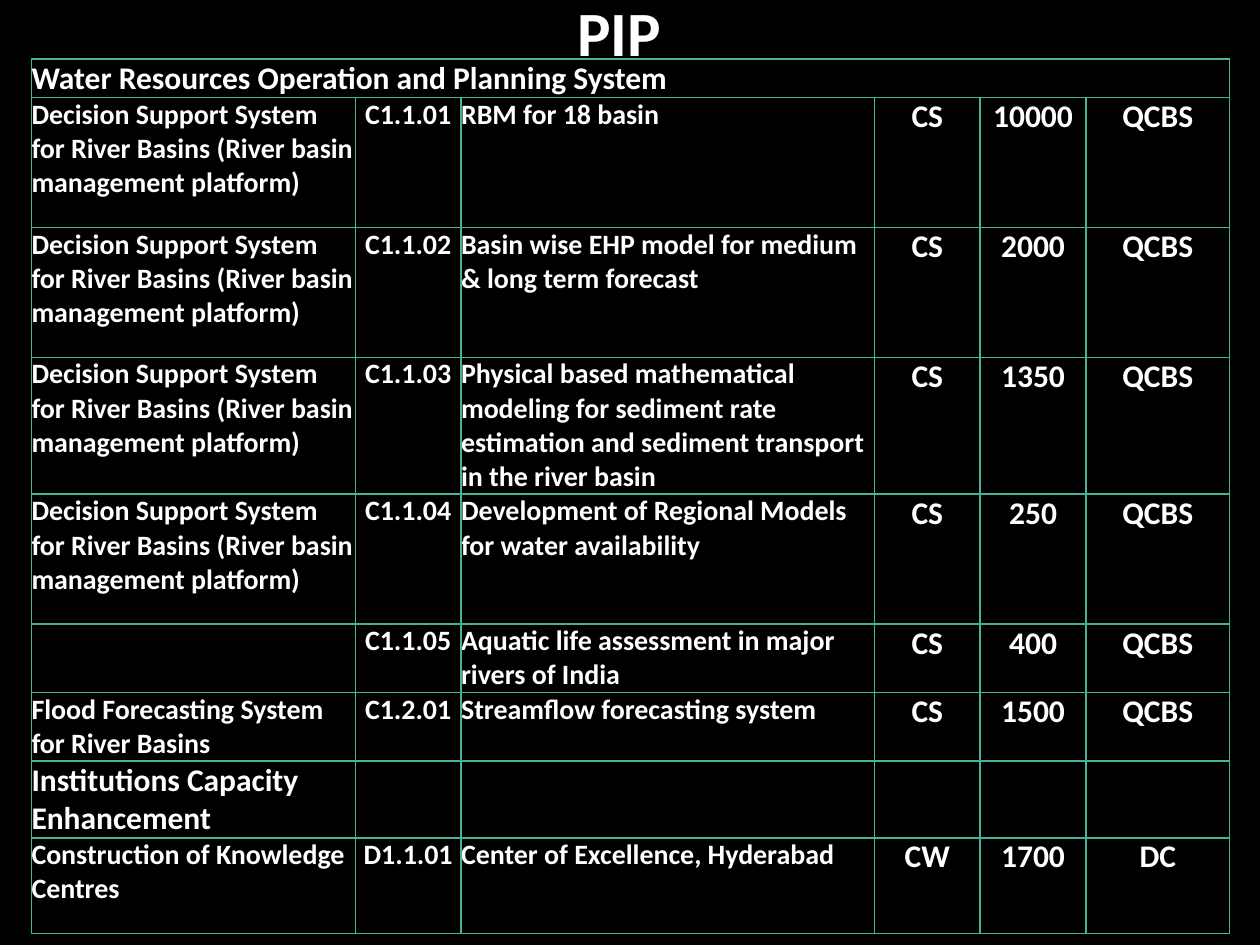
from lxml import etree
from pptx import Presentation
from pptx import util as u
from pptx.dml.color import RGBColor
from pptx.enum import text
from pptx.oxml.ns import qn

HUES = {"back": "000000", "ink": "FFFFFF", "rule": "46B298"}
FONT = "Calibri"
WIDE, HIGH = 10, 7.5
COLS = [2.57, 0.84, 3.28, 0.84, 0.84, 1.14]
ROWS = [0.3] + [1.03] * 4 + [0.52] * 2 + [0.58, 0.76]
SIZES = [16, 16, 16, 18, 18, 18]
MID = {1, 3, 4, 5}  # centred columns

BASIN = "Decision Support System for River Basins (River basin management platform)"
HEADS = {0: "Water Resources Operation and Planning System",
         7: "Institutions Capacity Enhancement"}
ITEMS = {
    1: (BASIN, "C1.1.01", "RBM for 18 basin", "CS", "10000", "QCBS"),
    2: (BASIN, "C1.1.02", "Basin wise EHP model for medium & long term forecast",
        "CS", "2000", "QCBS"),
    3: (BASIN, "C1.1.03", "Physical based mathematical modeling for sediment rate "
        "estimation and sediment transport in the river basin", "CS", "1350", "QCBS"),
    4: (BASIN, "C1.1.04", "Development of Regional Models for water availability",
        "CS", "250", "QCBS"),
    5: ("", "C1.1.05", "Aquatic life assessment in major rivers of India",
        "CS", "400", "QCBS"),
    6: ("Flood Forecasting System for River Basins", "C1.2.01",
        "Streamflow forecasting system", "CS", "1500", "QCBS"),
    8: ("Construction of Knowledge Centres", "D1.1.01",
        "Center of Excellence, Hyderabad", "CW", "1700", "DC"),
}


def hue(name):
    return RGBColor.from_string(HUES[name])


def write(frame, words, size, mid=False):
    para = frame.paragraphs[0]
    para.alignment = text.PP_ALIGN.CENTER if mid else text.PP_ALIGN.LEFT
    if not words:
        return
    run = para.add_run()
    run.text = words
    run.font.name, run.font.size, run.font.bold = FONT, u.Pt(size), True
    run.font.color.rgb = hue("ink")


def dress(cell):
    """Rule all four sides, clear the margins and fill the cell."""
    props = cell._tc.get_or_add_tcPr()
    for side in ("lnL", "lnR", "lnT", "lnB"):
        line = etree.SubElement(props, qn("a:" + side), w=str(u.Pt(1)))
        fill = etree.SubElement(line, qn("a:solidFill"))
        etree.SubElement(fill, qn("a:srgbClr"), val=HUES["rule"])
    cell.fill.solid()
    cell.fill.fore_color.rgb = hue("back")
    cell.margin_left = cell.margin_right = 0
    cell.margin_top = cell.margin_bottom = 0


def add_grid(slide):
    grid = slide.shapes.add_table(
        len(ROWS), len(COLS), u.Inches(0.25), u.Inches(0.47),
        u.Inches(sum(COLS)), u.Inches(sum(ROWS))).table
    grid.first_row = grid.horz_banding = False
    for col, width in zip(grid.columns, COLS):
        col.width = u.Inches(width)
    for row, height in zip(grid.rows, ROWS):
        row.height = u.Inches(height)
    for cell in grid.iter_cells():
        dress(cell)
    grid.cell(0, 0).merge(grid.cell(0, len(COLS) - 1))
    for r, words in HEADS.items():
        write(grid.cell(r, 0).text_frame, words, 18)
    for r, item in ITEMS.items():
        for c, words in enumerate(item):
            write(grid.cell(r, c).text_frame, words, SIZES[c], c in MID)


def add_title(slide, words):
    box = slide.shapes.add_textbox(0, 0, u.Inches(9.83), u.Inches(HIGH / 15))
    frame = box.text_frame
    frame.word_wrap = True
    frame.vertical_anchor = text.MSO_ANCHOR.MIDDLE
    write(frame, words, 36, True)


def main():
    deck = Presentation()
    deck.slide_width, deck.slide_height = u.Inches(WIDE), u.Inches(HIGH)
    slide = deck.slides.add_slide(deck.slide_layouts[6])
    slide.background.fill.solid()
    slide.background.fill.fore_color.rgb = hue("back")
    add_grid(slide)
    add_title(slide, "PIP")
    deck.save("out.pptx")


if __name__ == "__main__":
    main()
